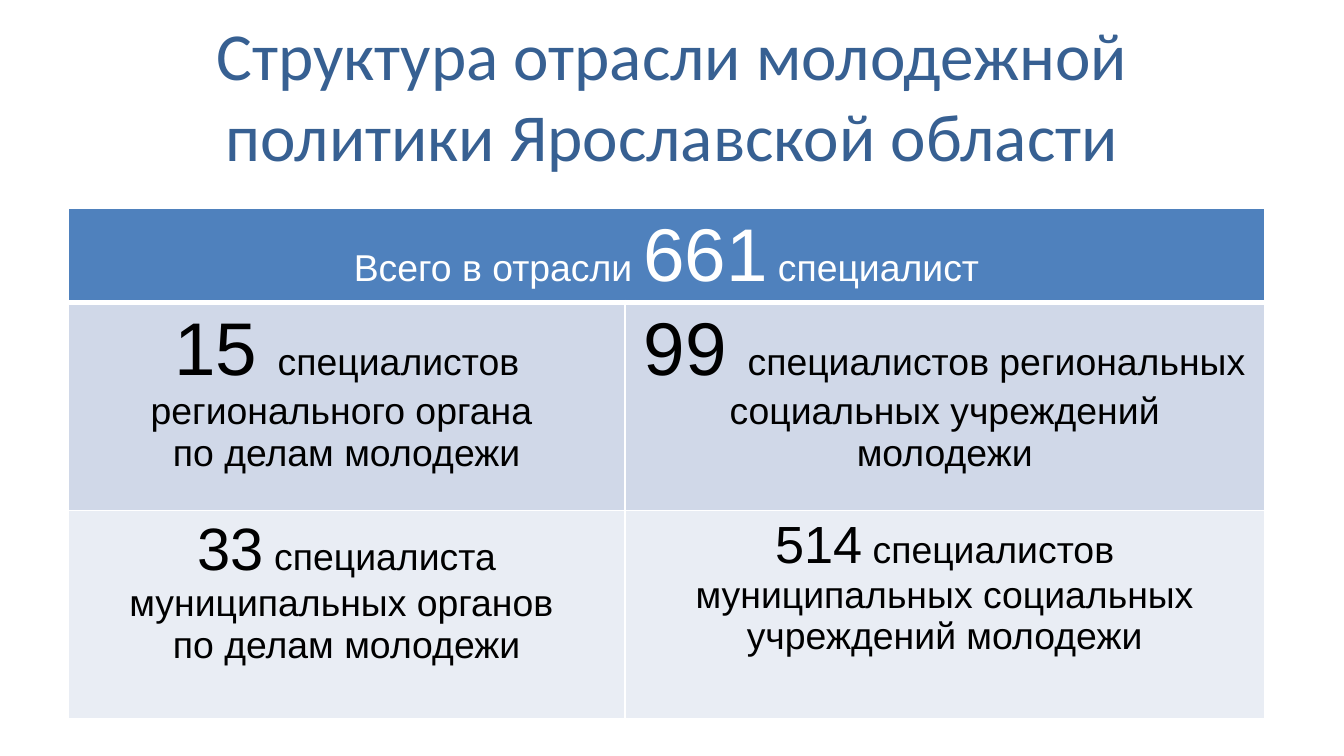
from lxml.etree import SubElement
from pptx import Presentation
from pptx.dml.color import RGBColor
from pptx.enum.text import MSO_ANCHOR, PP_ALIGN
from pptx.oxml.ns import qn
from pptx.util import Inches, Pt

COLORS = {"title": "376092", "header": "4F81BD", "regional": "D0D8E8",
          "municipal": "E9EDF4", "white": "FFFFFF", "black": "000000"}


def add_text(paragraph, text, size, font_name, color):
    run = paragraph.add_run()
    run.text = text
    formats = {"name": font_name, "size": Pt(size), "bold": False}
    for attribute, value in formats.items():
        setattr(run.font, attribute, value)
    run.font.color.rgb = RGBColor.from_string(COLORS[color])


def add_borders(cell, bottom_width):
    properties = cell._tc.get_or_add_tcPr()
    widths = {"a:lnL": 1, "a:lnR": 1, "a:lnT": 1, "a:lnB": bottom_width}
    for tag, width in widths.items():
        line = SubElement(properties, qn(tag), w=str(Pt(width)))
        fill = SubElement(line, qn("a:solidFill"))
        SubElement(fill, qn("a:srgbClr"), val=COLORS["white"])


prs = Presentation()
prs.slide_width, prs.slide_height = Inches(10), Inches(10 * 9 / 16)
slide = prs.slides.add_slide(prs.slide_layouts[5])

title = slide.shapes.title
title_box = {"left": 0.5, "top": 0.23, "width": 9, "height": 0.94}
for attribute, value in title_box.items():
    setattr(title, attribute, Inches(value))
title.text_frame.vertical_anchor = MSO_ANCHOR.MIDDLE
heading = title.text_frame.paragraphs[0]
heading.alignment = PP_ALIGN.CENTER
add_text(heading, "Структура отрасли молодежной политики Ярославской области",
         36, "Calibri", "title")

staff = slide.shapes.add_table(3, 2, Inches(0.51), Inches(1.55),
                               Inches(8.9), Inches(3.78)).table
for column, width in zip(staff.columns, (4.14, 4.76)):
    column.width = Inches(width)
for row, height in zip(staff.rows, (0.68, 1.55, 1.55)):
    row.height = Inches(height)
staff.cell(0, 0).merge(staff.cell(0, 1))

row_styles = [("header", "white", 3), ("regional", "black", 1), ("municipal", "black", 1)]
staff_counts = [
    [[[("Всего в отрасли ", 20), ("661", 40), (" специалист", 20)]], []],
    [[[("15 ", 40), ("специалистов регионального органа ", 20)],
      [("по делам молодежи", 20)]],
     [[("99 ", 40), ("специалистов региональных социальных учреждений молодежи", 20)]]],
    [[[("33", 32), (" специалиста муниципальных органов ", 20)],
      [("по делам молодежи", 20)]],
     [[("514", 28), (" специалистов муниципальных социальных учреждений молодежи", 20)]]],
]
margins = {"margin_left": 0.1, "margin_right": 0.1, "margin_top": 0.04, "margin_bottom": 0.04}

for row, (fill_color, text_color, bottom_width), counts in zip(staff.rows, row_styles, staff_counts):
    for cell, paragraphs in zip(row.cells, counts):
        add_borders(cell, bottom_width)
        cell.fill.solid()
        cell.fill.fore_color.rgb = RGBColor.from_string(COLORS[fill_color])
        for attribute, value in margins.items():
            setattr(cell, attribute, Inches(value))
        for index, runs in enumerate(paragraphs):
            frame = cell.text_frame
            paragraph = frame.add_paragraph() if index else frame.paragraphs[0]
            paragraph.alignment = PP_ALIGN.CENTER
            for text, size in runs:
                add_text(paragraph, text, size, "Arial", text_color)

prs.save("out.pptx")
